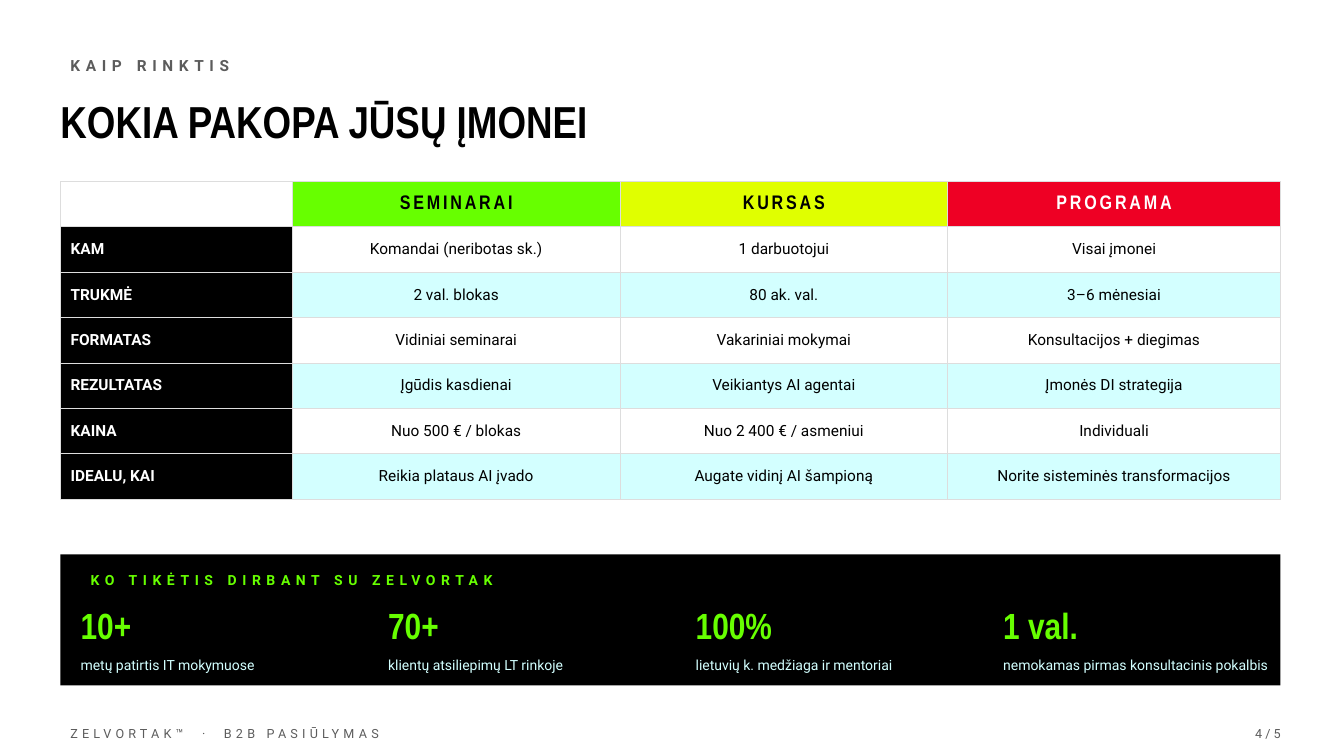
from collections import namedtuple

from lxml.etree import SubElement
from pptx import Presentation
from pptx.dml.color import RGBColor
from pptx.enum.shapes import MSO_SHAPE
from pptx.enum.text import MSO_ANCHOR, PP_ALIGN
from pptx.oxml.ns import qn
from pptx.util import Inches, Pt

BLACK = RGBColor(0x00, 0x00, 0x00)
WHITE = RGBColor(0xFF, 0xFF, 0xFF)
GREY = RGBColor(0x5C, 0x5C, 0x5C)
RULE = RGBColor(0xDD, 0xDD, 0xDD)
GREEN = RGBColor(0x67, 0xFF, 0x00)
LIME = RGBColor(0xE0, 0xFF, 0x00)
RED = RGBColor(0xEE, 0x00, 0x24)
AQUA = RGBColor(0xD3, 0xFF, 0xFF)

HEADLINE = "Arial Narrow"
BODY = "Roboto"
GRID = Inches(0.05)

Box = namedtuple("Box", "left top width height")
Style = namedtuple("Style", "font size color bold spacing", defaults=(False, 0))

COMPANY = "ZELVORTAK"
TIERS = [("SEMINARAI", GREEN, BLACK), ("KURSAS", LIME, BLACK), ("PROGRAMA", RED, WHITE)]
CRITERIA = [
    ("KAM", "Komandai (neribotas sk.)", "1 darbuotojui", "Visai įmonei"),
    ("TRUKMĖ", "2 val. blokas", "80 ak. val.", "3–6 mėnesiai"),
    ("FORMATAS", "Vidiniai seminarai", "Vakariniai mokymai", "Konsultacijos + diegimas"),
    ("REZULTATAS", "Įgūdis kasdienai", "Veikiantys AI agentai", "Įmonės DI strategija"),
    ("KAINA", "Nuo 500 € / blokas", "Nuo 2 400 € / asmeniui", "Individuali"),
    ("IDEALU, KAI", "Reikia plataus AI įvado", "Augate vidinį AI šampioną",
     "Norite sisteminės transformacijos"),
]
COLUMNS = (46, 65, 65, 66)
FACTS = [
    ("10+", "metų patirtis IT mokymuose"),
    ("70+", "klientų atsiliepimų LT rinkoje"),
    ("100%", "lietuvių k. medžiaga ir mentoriai"),
    ("1 val.", "nemokamas pirmas konsultacinis pokalbis"),
]


def within(box, left, top, width, height):
    """Return a box placed relative to the corner of another, in grid cells."""
    return Box(box.left + left, box.top + top, width, height)


def emu(box):
    """Turn a box of grid cells into slide lengths."""
    return [length * GRID for length in box]


def add_span(para, text, style):
    """Add one styled run to a paragraph."""
    span = para.add_run()
    span.text = text
    span.font.name = style.font
    span.font.size = Pt(style.size)
    span.font.bold = style.bold
    span.font.color.rgb = style.color
    if style.spacing:
        span.font._element.set("spc", str(style.spacing * 100))


def add_text(page, box, spans, align=PP_ALIGN.LEFT, inset=True):
    """Add a vertically centred text box made of (text, style) spans."""
    frame = page.shapes.add_textbox(*emu(box)).text_frame
    frame.word_wrap = True
    frame.vertical_anchor = MSO_ANCHOR.MIDDLE
    if not inset:
        frame.margin_left = frame.margin_right = 0
        frame.margin_top = frame.margin_bottom = 0
    para = frame.paragraphs[0]
    para.alignment = align
    for text, style in spans:
        add_span(para, text, style)


def set_cell(cell, fill, text="", style=None, align=PP_ALIGN.LEFT):
    """Give a table cell its borders, fill and text."""
    properties = cell._tc.get_or_add_tcPr()
    for side in ("a:lnL", "a:lnR", "a:lnT", "a:lnB"):
        line = SubElement(properties, qn(side), w=str(Pt(0.5)))
        SubElement(SubElement(line, qn("a:solidFill")), qn("a:srgbClr"), val=str(RULE))
    cell.fill.solid()
    cell.fill.fore_color.rgb = fill
    cell.vertical_anchor = MSO_ANCHOR.MIDDLE
    if text:
        para = cell.text_frame.paragraphs[0]
        para.alignment = align
        add_span(para, text, style)


def add_heading(page, box):
    """Place the kicker and the title."""
    kicker = Style(BODY, 11, GREY, True, 4)
    add_text(page, within(box, 0, 0, 100, 6), [("KAIP RINKTIS", kicker)])
    title = Style(HEADLINE, 32, BLACK, True)
    add_text(page, within(box, 0, 7, box.width, 14),
             [("KOKIA PAKOPA JŪSŲ ĮMONEI", title)], inset=False)


def add_comparison(page, box):
    """Place the table that compares the tiers."""
    row_count = len(CRITERIA) + 1
    table = page.shapes.add_table(row_count, len(COLUMNS), *emu(box)).table
    for column, width in zip(table.columns, COLUMNS):
        column.width = width * GRID
    for row in table.rows:
        row.height = box.height * GRID // row_count
    set_cell(table.cell(0, 0), WHITE)
    for column, (name, fill, color) in enumerate(TIERS, 1):
        set_cell(table.cell(0, column), fill, name,
                 Style(HEADLINE, 14, color, True, 2), PP_ALIGN.CENTER)
    for row, (label, *values) in enumerate(CRITERIA, 1):
        set_cell(table.cell(row, 0), BLACK, label, Style(BODY, 11, WHITE, True))
        band = WHITE if row % 2 else AQUA
        for column, value in enumerate(values, 1):
            set_cell(table.cell(row, column), band, value,
                     Style(BODY, 11, BLACK), PP_ALIGN.CENTER)


def add_facts(page, box):
    """Place the black panel with its heading and evenly spaced figures."""
    panel = page.shapes.add_shape(MSO_SHAPE.RECTANGLE, *emu(box))
    panel.shadow.inherit = False
    panel.fill.solid()
    panel.fill.fore_color.rgb = BLACK
    panel.line.fill.background()
    add_text(page, within(box, 4, 2, 220, 6),
             [(f"KO TIKĖTIS DIRBANT SU {COMPANY}", Style(BODY, 10, GREEN, True, 4))])
    for index, (figure, label) in enumerate(FACTS):
        left = 4 + 61 * index
        add_text(page, within(box, left, 9, 32, 10),
                 [(figure, Style(HEADLINE, 26, GREEN, True))], inset=False)
        add_text(page, within(box, left, 18, 58, 8),
                 [(label, Style(BODY, 10, AQUA))], inset=False)


def add_footer(page, box):
    """Place the footer line and the page number."""
    spaced = Style(BODY, 9, GREY, False, 3)
    gap = (" ", spaced._replace(spacing=8))
    add_text(page, within(box, 0, 0, 120, box.height),
             [(f"{COMPANY}™", spaced), gap, ("·", spaced), gap, ("B2B PASIŪLYMAS", spaced)])
    add_text(page, within(box, box.width - 16, 0, 16, box.height),
             [("4 / 5", Style(BODY, 9, GREY))], PP_ALIGN.RIGHT)


def main():
    """Build the slide and save the deck."""
    deck = Presentation()
    deck.slide_width, deck.slide_height = Inches(13.33), Inches(7.5)
    page = deck.slides.add_slide(deck.slide_layouts[6])
    add_heading(page, Box(12, 10, 250, 21))
    add_comparison(page, Box(12, 36, sum(COLUMNS), 63))
    add_facts(page, Box(12, 110, sum(COLUMNS), 26))
    add_footer(page, Box(12, 143, 244, 5))
    deck.save("out.pptx")


if __name__ == "__main__":
    main()
